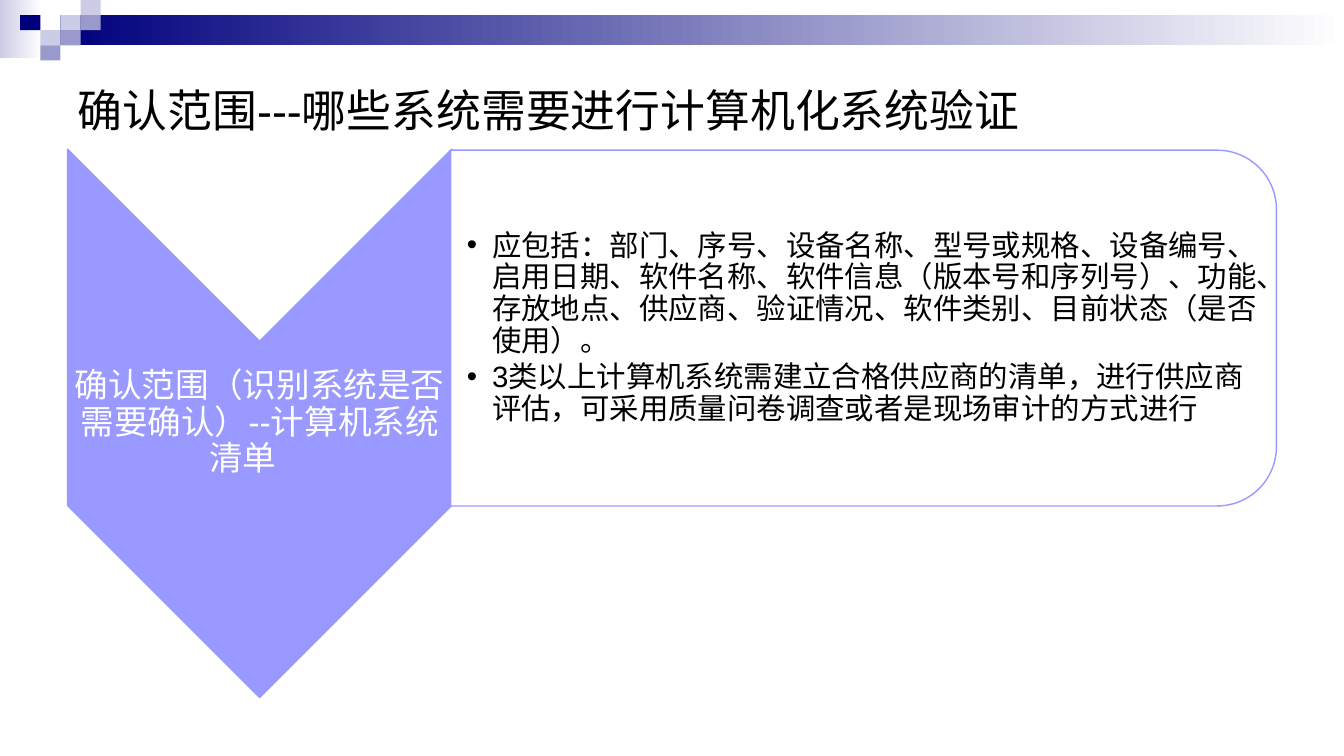
from pptx import Presentation
from pptx.dml.color import RGBColor
from pptx.enum.shapes import MSO_SHAPE as Shape
from pptx.enum.text import MSO_ANCHOR as Anchor, MSO_AUTO_SIZE as AutoSize, PP_ALIGN as Align
from pptx.oxml.ns import qn
from pptx.util import Inches, Pt
from lxml.etree import SubElement

NAVY, MID, PALE, ACCENT = "00007D", "9999CC", "CCCCE6", "9999FF"
WHITE, BLACK = "FFFFFF", "000000"
TITLE = "确认范围---哪些系统需要进行计算机化系统验证"
STEP = "确认范围（识别系统是否需要确认）--计算机系统清单\t"
DETAILS = [
    "应包括：部门、序号、设备名称、型号或规格、设备编号、启用日期、软件名称、软件信息（版本号和序列号）、"
    "功能、存放地点、供应商、验证情况、软件类别、目前状态（是否使用）。",
    "3类以上计算机系统需建立合格供应商的清单，进行供应商评估，可采用质量问卷调查或者是现场审计的方式进行",
]
# Column, row and colour of each square in the corner mosaic
MOSAIC = [(3, 1, PALE), (4, 0, PALE), (4, 1, MID), (2, 2, PALE),
          (1, 1, NAVY), (3, 2, MID), (2, 3, MID)]


def colour(value):
    return RGBColor.from_string(value)


def place(shape, box):
    for name, value in zip(("left", "top", "width", "height"), box):
        setattr(shape, name, Inches(value))


def add_block(page, kind, box, fill, line=None):
    """Add a shape; a pair of colours as fill gives a left-to-right gradient."""
    shape = page.shapes.add_shape(kind, *map(Inches, box))
    shape.shadow.inherit = False
    if isinstance(fill, tuple):
        shape.fill.gradient()
        shape.fill.gradient_angle = 0
        for stop, value in zip(shape.fill.gradient_stops, fill):
            stop.color.rgb = colour(value)
    else:
        shape.fill.solid()
        shape.fill.fore_color.rgb = colour(fill)
    if line:
        shape.line.color.rgb = colour(line)
        shape.line.width = Pt(1)
    else:
        shape.line.fill.background()
    return shape


def add_turned_block(page, kind, box, fill, line):
    """Add a shape turned by 90 degrees that covers the given box."""
    left, top, width, height = box
    shift = (width - height) / 2
    shape = add_block(page, kind, (left + shift, top - shift, height, width), fill, line)
    shape.rotation = 90
    return shape


def write(shape, lines, size, shade, insets, paragraph_format):
    frame = shape.text_frame
    margins = zip(("margin_left", "margin_top", "margin_right", "margin_bottom"),
                  map(Inches, insets))
    settings = {"word_wrap": True, "auto_size": AutoSize.NONE,
                "vertical_anchor": Anchor.MIDDLE, **dict(margins)}
    for name, value in settings.items():
        setattr(frame, name, value)
    for index, line in enumerate(lines):
        para = frame.paragraphs[0] if index == 0 else frame.add_paragraph()
        for name, value in paragraph_format.items():
            setattr(para, name, value)
        span = para.add_run()
        span.text = line
        for name, value in {"name": "Arial", "size": Pt(size)}.items():
            setattr(span.font, name, value)
        span.font.color.rgb = colour(shade)


def add_bullets(frame, indent):
    for para in frame.paragraphs:
        properties = para._p.get_or_add_pPr()
        properties.set("marL", str(Inches(indent)))
        properties.set("indent", str(-Inches(indent)))
        SubElement(properties, qn("a:buFont"), typeface="Arial")
        SubElement(properties, qn("a:buChar"), char="•")


def draw_banner(page, box):
    left, top, width, height = box
    cell_width, cell_height = 0.2, 0.15
    add_block(page, Shape.RECTANGLE, (left, top, 0.42, height), (PALE, WHITE))
    bar_left = 3 * cell_width
    add_block(page, Shape.RECTANGLE,
              (left + bar_left, top + cell_height, width - bar_left, 2 * cell_height),
              (NAVY, WHITE))
    for column, row, fill in MOSAIC:
        add_block(page, Shape.RECTANGLE,
                  (left + column * cell_width, top + row * cell_height,
                   cell_width, cell_height), fill)


def draw_title(page, box):
    title = page.shapes.title
    place(title, box)
    write(title, [TITLE], 32, BLACK, (0.1, 0.05, 0.1, 0.05), {"alignment": Align.LEFT})


def draw_step(page, box):
    left, top, width, height = box
    add_turned_block(page, Shape.CHEVRON, box, ACCENT, ACCENT)
    notch = width / 2
    label = page.shapes.add_textbox(
        *map(Inches, (left, top + notch, width, height - 2 * notch)))
    write(label, [STEP], 24, WHITE, (0.02,) * 4,
          {"alignment": Align.CENTER, "line_spacing": 0.9, "space_after": Pt(8.4)})


def draw_details(page, box):
    left, top, width, height = box
    panel = add_turned_block(page, Shape.ROUND_2_SAME_RECTANGLE, box, WHITE, ACCENT)
    body = page.placeholders[1]
    place(body, (left, top + 0.17, width - 0.17, height - 0.34))
    panel.element.addnext(body.element)
    write(body, DETAILS, 21, BLACK, (0.16, 0.01, 0.01, 0.01),
          {"alignment": Align.LEFT, "line_spacing": 0.9,
           "space_before": Pt(0), "space_after": Pt(3.15)})
    add_bullets(body.text_frame, 0.25)


def main():
    deck = Presentation()
    deck.slide_width, deck.slide_height = Inches(13.33), Inches(7.5)
    page = deck.slides.add_slide(deck.slide_layouts[1])
    draw_banner(page, (0, 0, 13.33, 0.58))
    draw_title(page, (0.67, 0.5, 12, 1.17))
    draw_step(page, (0.67, 1.48, 3.81, 5.44))
    draw_details(page, (4.47, 1.49, 8.19, 3.53))
    deck.save("out.pptx")


if __name__ == "__main__":
    main()
